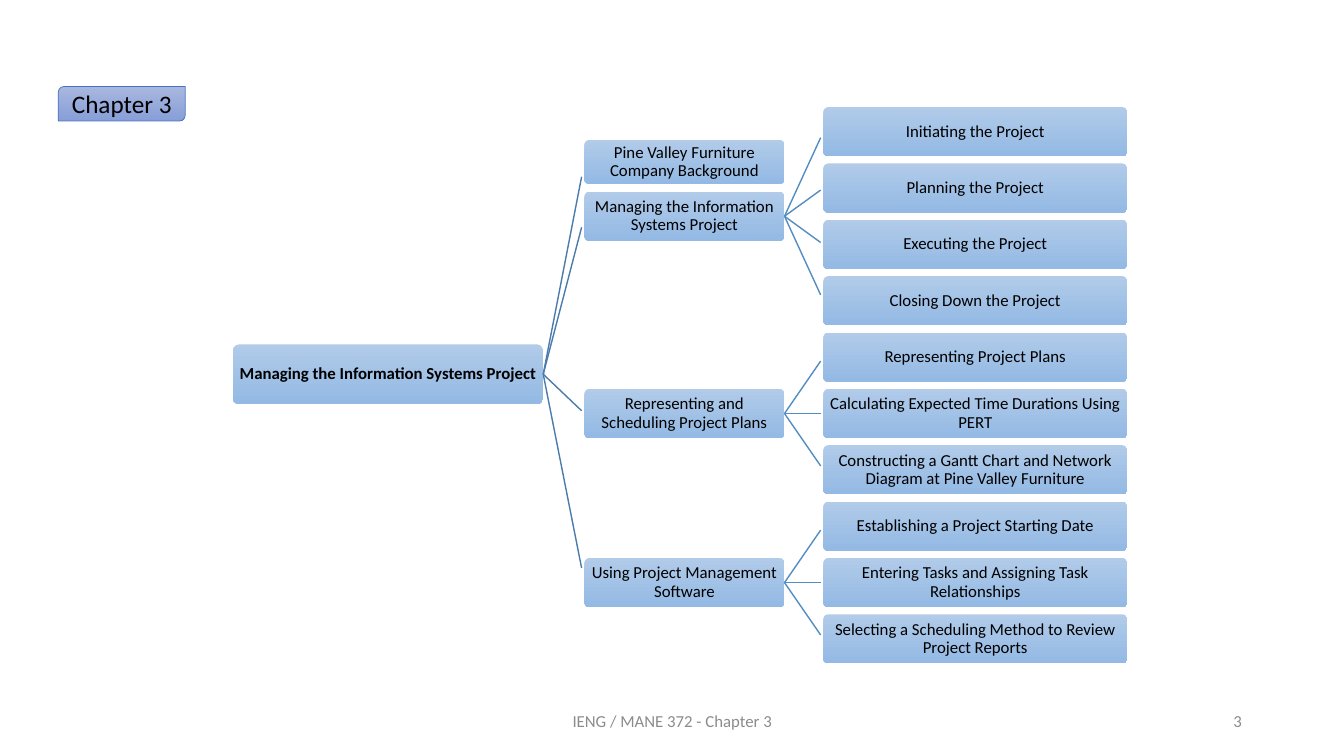
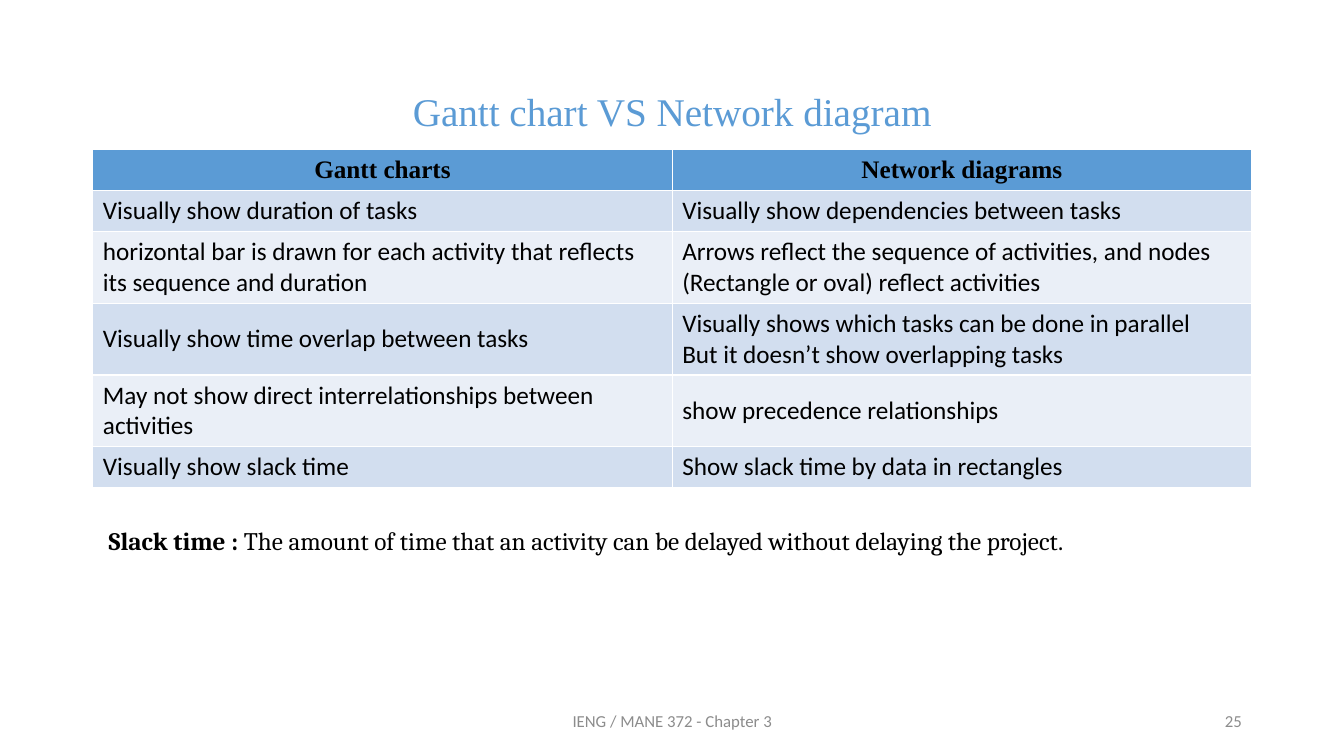
from pptx import Presentation
from pptx import util as u
from pptx.dml.color import RGBColor
from pptx.enum import shapes, text
from pptx.oxml.ns import qn
from lxml import etree

BLACK = RGBColor(0x00, 0x00, 0x00)
GREY = RGBColor(0x8C, 0x8C, 0x8C)
BLUE = RGBColor(0x5B, 0x9B, 0xD5)
BADGE_LINE = RGBColor(0x44, 0x72, 0xC4)
BADGE_FILL = RGBColor(0xA8, 0xB7, 0xDF), RGBColor(0x88, 0x9E, 0xD7)
NODE_FILL = RGBColor(0xB1, 0xCB, 0xE9), RGBColor(0x93, 0xB9, 0xE4)
ROOT_LINK = RGBColor(0x49, 0x7C, 0xAB)
LEAF_LINK = RGBColor(0x53, 0x8D, 0xC1)
ROW_FILLS = RGBColor(0xD2, 0xDE, 0xEF), RGBColor(0xEA, 0xEF, 0xF7)

LEFT, CENTER, RIGHT = text.PP_ALIGN.LEFT, text.PP_ALIGN.CENTER, text.PP_ALIGN.RIGHT
MIDDLE, TOP = text.MSO_ANCHOR.MIDDLE, text.MSO_ANCHOR.TOP
TITLE_ONLY, BLANK = 5, 6
LINK_REACH = 0.93  # share of the way to the child at which a link stops

BODY = {"name": "Calibri", "size": u.Pt(18), "bold": False}
SMALL = BODY | {"size": u.Pt(12)}
SMALL_BOLD = SMALL | {"bold": True}
TITLE = {"name": "Times New Roman", "size": u.Pt(28), "bold": False}
TABLE_HEAD = TITLE | {"size": u.Pt(18), "bold": True}
NOTE = BODY | {"name": "Cambria"}
NOTE_BOLD = NOTE | {"bold": True}

NODE_HEIGHT = 1.24
LEAF_TOP, LEAF_PITCH = 3.32, 1.42
BRANCHES = [
    ("Managing the Information Systems Project", [
        "Initiating the Project",
        "Planning the Project",
        "Executing the Project",
        "Closing Down the Project"]),
    ("Representing and Scheduling Project Plans", [
        "Representing Project Plans",
        "Calculating Expected Time Durations Using PERT",
        "Constructing a Gantt Chart and Network Diagram at Pine Valley Furniture"]),
    ("Using Project Management Software", [
        "Establishing a Project Starting Date",
        "Entering Tasks and Assigning Task Relationships",
        "Selecting a Scheduling Method to Review Project Reports"]),
]
COMPARISON = [
    ("Gantt charts", "Network diagrams"),
    ("Visually show duration of tasks", "Visually show dependencies between tasks"),
    ("horizontal bar is drawn for each activity that reflects its sequence and duration",
     "Arrows reflect the sequence of activities, and nodes (Rectangle or oval) reflect activities"),
    ("Visually show time overlap between tasks",
     "Visually shows which tasks can be done in parallel\nBut it doesn’t show overlapping tasks"),
    ("May not show direct interrelationships between activities",
     "show precedence relationships"),
    ("Visually show slack time", "Show slack time by data in rectangles"),
]
ROW_HEIGHTS = [1.03, 1.03, 1.81, 1.81, 1.81, 1.03]


def set_all(target, values):
    for name, value in values.items():
        setattr(target, name, value)


def cm(*lengths):
    return [u.Cm(length) for length in lengths]


class Deck:
    """Holds the presentation, its shared style and the current slide."""

    def __init__(self):
        self.presentation = Presentation()
        set_all(self.presentation, {"slide_width": u.Cm(33.87), "slide_height": u.Cm(19.05)})
        self.slide = None

    def start_slide(self, number, title=None):
        layout = self.presentation.slide_layouts[TITLE_ONLY if title else BLANK]
        self.slide = self.presentation.slides.add_slide(layout)
        if title:
            shape = self.slide.shapes.title
            set_all(shape, dict(zip(("left", "top", "width", "height"),
                                    cm(2.34, 1.02, 29.2, 3.68))))
            shape.text_frame.auto_size = text.MSO_AUTO_SIZE.NONE
            self.fill_text(shape.text_frame, [(title, TITLE)], BLUE, CENTER, spacing=0.9)
        self.add_text((11.23, 17.65, 11.43, 1.02),
                      [("IENG / MANE 372 - Chapter 3", SMALL)], GREY, CENTER)
        self.add_text((23.93, 17.65, 7.62, 1.02), [(str(number), SMALL)], GREY, RIGHT)

    def fill_text(self, frame, runs, color=BLACK, alignment=LEFT, anchor=MIDDLE, spacing=1.0):
        """Add (words, font format) runs; a line feed starts a new paragraph."""
        set_all(frame, {"word_wrap": True, "vertical_anchor": anchor})
        paragraph = frame.paragraphs[0]
        for words, font in runs:
            for index, line in enumerate(words.split("\n")):
                if index:
                    paragraph = frame.add_paragraph()
                set_all(paragraph, {"alignment": alignment, "line_spacing": spacing})
                run = paragraph.add_run()
                run.text = line
                set_all(run.font, font)
                run.font.color.rgb = color

    def add_text(self, box, runs, color=BLACK, alignment=LEFT, anchor=MIDDLE):
        shape = self.slide.shapes.add_textbox(*cm(*box))
        self.fill_text(shape.text_frame, runs, color, alignment, anchor)

    def add_gradient_shape(self, kind, box, colors):
        shape = self.slide.shapes.add_shape(kind, *cm(*box))
        shape.shadow.inherit = False
        shape.fill.gradient()
        shape.fill.gradient_angle = 270
        for stop, color in zip(shape.fill.gradient_stops, colors):
            stop.color.rgb = color
        return shape

    def add_badge(self, words):
        shape = self.add_gradient_shape(shapes.MSO_SHAPE.ROUND_2_DIAG_RECTANGLE,
                                        (1.47, 2.18, 3.2, 0.87), BADGE_FILL)
        shape.line.color.rgb = BADGE_LINE
        shape.line.width = u.Pt(0.5)
        self.fill_text(shape.text_frame, [(words, BODY)], alignment=CENTER)

    def add_node(self, words, left, middle, width, height=NODE_HEIGHT, font=SMALL):
        shape = self.add_gradient_shape(shapes.MSO_SHAPE.ROUNDED_RECTANGLE,
                                        (left, middle - height / 2, width, height), NODE_FILL)
        shape.adjustments[0] = 0.1
        shape.line.fill.background()
        margins = ("margin_left", "margin_top", "margin_right", "margin_bottom")
        set_all(shape.text_frame, dict.fromkeys(margins, u.Cm(0.03)))
        self.fill_text(shape.text_frame, [(words, font)], alignment=CENTER, spacing=0.9)
        return shape

    def add_link(self, parent, child, color):
        """Draw a line from the parent's right side that stops just short of the child."""
        start_x, start_y = parent.left + parent.width, parent.top + parent.height // 2
        child_y = child.top + child.height // 2
        end_x = start_x + int((child.left - start_x) * LINK_REACH)
        end_y = start_y + int((child_y - start_y) * LINK_REACH)
        link = self.slide.shapes.add_connector(
            shapes.MSO_CONNECTOR.STRAIGHT, start_x, start_y, end_x, end_y)
        link.begin_connect(parent, 3)
        link.line.color.rgb = color
        link.line.width = u.Pt(1)
        etree.SubElement(link._element.spPr, qn("a:effectLst"))

    def add_table(self, rows, heights, box):
        table = self.slide.shapes.add_table(len(rows), len(rows[0]), *cm(*box)).table
        for index, (row, height) in enumerate(zip(rows, heights)):
            table.rows[index].height = u.Cm(height)
            is_head = index == 0
            for column, words in enumerate(row):
                cell = table.cell(index, column)
                cell.fill.solid()
                cell.fill.fore_color.rgb = BLUE if is_head else ROW_FILLS[(index - 1) % 2]
                cell.vertical_anchor = MIDDLE
                self.fill_text(cell.text_frame, [(words, TABLE_HEAD if is_head else BODY)],
                               alignment=CENTER if is_head else LEFT)


def build_outline(deck):
    deck.start_slide(3)
    deck.add_badge("Chapter 3")
    root = deck.add_node("Managing the Information Systems Project",
                         5.87, 9.43, 7.82, 1.5, SMALL_BOLD)
    background = deck.add_node("Pine Valley Furniture Company Background",
                               14.73, 4.08, 5.04, 1.1)
    deck.add_link(root, background, ROOT_LINK)
    middle = LEAF_TOP
    for heading, topics in BRANCHES:
        branch_middle = middle + LEAF_PITCH * (len(topics) - 1) / 2
        branch = deck.add_node(heading, 14.73, branch_middle, 5.04)
        deck.add_link(root, branch, ROOT_LINK)
        for topic in topics:
            leaf = deck.add_node(topic, 20.75, middle, 7.66)
            deck.add_link(branch, leaf, LEAF_LINK)
            middle += LEAF_PITCH


def build_comparison(deck):
    deck.start_slide(25, "Gantt chart VS Network diagram")
    deck.add_table(COMPARISON, ROW_HEIGHTS, (2.34, 3.77, 29.2, sum(ROW_HEIGHTS)))
    deck.add_text((2.49, 13.11, 28.68, 1.02), [
        ("Slack time : ", NOTE_BOLD),
        ("The amount of time that an activity can be delayed without delaying the project.", NOTE),
    ], anchor=TOP)


def main():
    deck = Deck()
    build_outline(deck)
    build_comparison(deck)
    deck.presentation.save("out.pptx")


if __name__ == "__main__":
    main()
